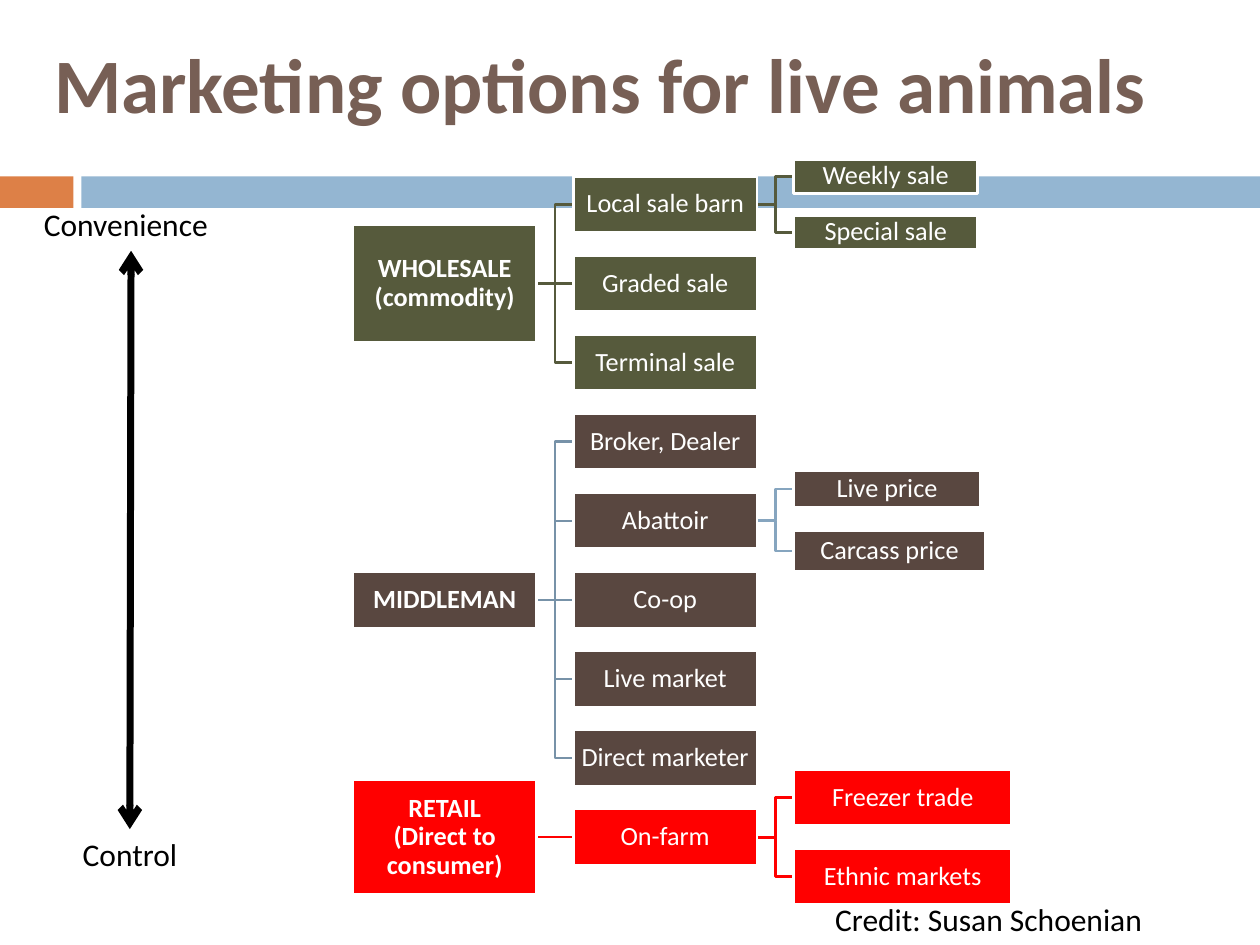
from pptx import Presentation, util as u
from pptx.dml.color import RGBColor
from pptx.enum import shapes as sh, text as tx
from pptx.oxml import parse_xml
from pptx.oxml.ns import nsdecls, qn

Pt = u.Pt
LEFT, MID = tx.PP_ALIGN.LEFT, tx.PP_ALIGN.CENTER
TOP, HALF = tx.MSO_ANCHOR.TOP, tx.MSO_ANCHOR.MIDDLE


def color(hexa):
    return RGBColor.from_string(hexa)


def write(frame, words, size=18, ink="000000", bold=False, align=LEFT,
          anchor=TOP, inset=None, space=None):
    frame.word_wrap = True
    frame.vertical_anchor = anchor
    if inset is not None:
        frame.margin_left = frame.margin_right = Pt(inset)
        frame.margin_top = frame.margin_bottom = Pt(inset)
    par = frame.paragraphs[0]
    par.text = words
    par.alignment = align
    par.line_spacing = space
    for run in par.runs:
        run.font.name = "Calibri"
        run.font.size = Pt(size)
        run.font.bold = bold
        run.font.color.rgb = color(ink)


class Deck:
    edge = 1.5    # line width of boxes and branches
    size = 15     # text size in boxes

    def __init__(self):
        self.prs = Presentation()
        self.prs.slide_width, self.prs.slide_height = Pt(720), Pt(540)
        self.slide = self.prs.slides.add_slide(self.prs.slide_layouts[5])
        self.items = self.slide.shapes

    def title(self, words, x, y, w, h):
        head = self.items.title
        head.left, head.top, head.width, head.height = map(Pt, (x, y, w, h))
        write(head.text_frame, words, size=44, ink="775F55", bold=True, anchor=HALF)

    def block(self, x, y, w, h, fill):
        box = self.items.add_shape(sh.MSO_SHAPE.RECTANGLE, *map(Pt, (x, y, w, h)))
        box.shadow.inherit = False
        box.fill.solid()
        box.fill.fore_color.rgb = color(fill)
        box.line.fill.background()
        return box

    def node(self, words, x, mid, w, h, fill, bold=False):
        box = self.block(x, mid - h / 2, w, h, fill)
        box.line.color.rgb = color("FFFFFF")
        box.line.width = Pt(self.edge)
        write(box.text_frame, words, size=self.size, ink="FFFFFF", bold=bold,
              align=MID, anchor=HALF, inset=0.75, space=0.9)

    def label(self, words, x, y, w, h, align=LEFT):
        box = self.items.add_textbox(*map(Pt, (x, y, w, h)))
        write(box.text_frame, words, align=align)

    def line(self, x1, y1, x2, y2, ink, width):
        link = self.items.add_connector(sh.MSO_CONNECTOR.STRAIGHT,
                                        *map(Pt, (x1, y1, x2, y2)))
        link.line.color.rgb = color(ink)
        link.line.width = Pt(width)
        link.element.spPr.append(parse_xml(f"<a:effectLst {nsdecls('a')}/>"))
        return link

    def arrow(self, x1, y1, x2, y2, ink, width):
        pen = self.line(x1, y1, x2, y2, ink, width).element.spPr.find(qn("a:ln"))
        for end in ("headEnd", "tailEnd"):
            pen.append(parse_xml(f"<a:{end} {nsdecls('a')} type='arrow'/>"))

    def branch(self, x1, y1, x2, y2, ink):
        if y1 == y2:
            self.line(x1, y1, x2, y2, ink, self.edge)
            return
        bend = (x1 + x2) / 2
        pen = self.items.build_freeform(Pt(x1), Pt(y1))
        pen.add_line_segments([(Pt(x), Pt(y)) for x, y in
                               ((bend, y1), (bend, y2), (x2, y2))], close=False)
        elbow = pen.convert_to_shape()
        elbow.shadow.inherit = False
        elbow.fill.background()
        elbow.line.color.rgb = color(ink)
        elbow.line.width = Pt(self.edge)


# Tree grid: three columns, evenly spaced rows
COLS = (201.6, 327.6, 453.6)
WIDE, HIGH = 105.1, 32
FIRST, STEP = 116.8, 45.2

# Root: words, row, height, fill, root line, leaf line, children
# Child: words, leaves; leaf: words, offset from child, width, height
TREE = [
    ("WHOLESALE\v(commodity)", 1, 67.7, "565A3C", "565A3C", "565A3C", [
        ("Local sale barn", [("Weekly sale", -16, WIDE, 19.5),
                             ("Special sale", 16, WIDE, 19.5)]),
        ("Graded sale", []),
        ("Terminal sale", [])]),
    ("MIDDLEMAN", 5, HIGH, "594740", "7792A8", "86A5BF", [
        ("Broker, Dealer", []),
        ("Abattoir", [("Live price", -18.2, 106.6, 20.9),
                      ("Carcass price", 17.2, 109.4, 23)]),
        ("Co-op", []),
        ("Live market", []),
        ("Direct marketer", [])]),
    ("RETAIL\v(Direct to consumer)", 8, 65.5, "FF0000", "FF0000", "FF0000", [
        ("On-farm", [("Freezer trade", -STEP / 2, 124.6, HIGH),
                     ("Ethnic markets", STEP / 2, 124.6, HIGH)])]),
]


def level(row):
    return FIRST + STEP * row


def plan():
    """Place the tree: lists of branches and nodes."""
    links, nodes, row = [], [], 0
    for words, spot, tall, fill, ink, tint, kids in TREE:
        root = level(spot)
        nodes.append((words, COLS[0], root, WIDE, tall, fill, True))
        for kid, leaves in kids:
            y = level(row)
            row += 1
            links.append((COLS[0] + WIDE, root, COLS[1], y, ink))
            nodes.append((kid, COLS[1], y, WIDE, HIGH, fill))
            for leaf, off, w, h in leaves:
                links.append((COLS[1] + WIDE, y, COLS[2], y + off, tint))
                nodes.append((leaf, COLS[2], y + off, w, h, fill))
    return links, nodes


def main():
    deck = Deck()

    # Title and band
    deck.title("Marketing options for live animals", 23.8, 2.2, 648, 90)
    deck.block(0, 100.8, 42, 18, "DD8047")
    deck.block(46.5, 100.8, 673.5, 18, "94B6D2")

    # Tree, with branches behind the boxes
    links, nodes = plan()
    for link in links:
        deck.branch(*link)
    for node in nodes:
        deck.node(*node)

    # Scale from convenience to control
    deck.label("Convenience", 18, 113.8, 114, 29)
    deck.label("Control", 17.3, 473.8, 114, 29, align=MID)
    deck.arrow(74.9, 143.3, 74.2, 473.8, "000000", 4)

    # Credit
    deck.label("Credit: Susan Schoenian", 470.2, 510.5, 233.3, 29)

    deck.prs.save("out.pptx")


if __name__ == "__main__":
    main()
